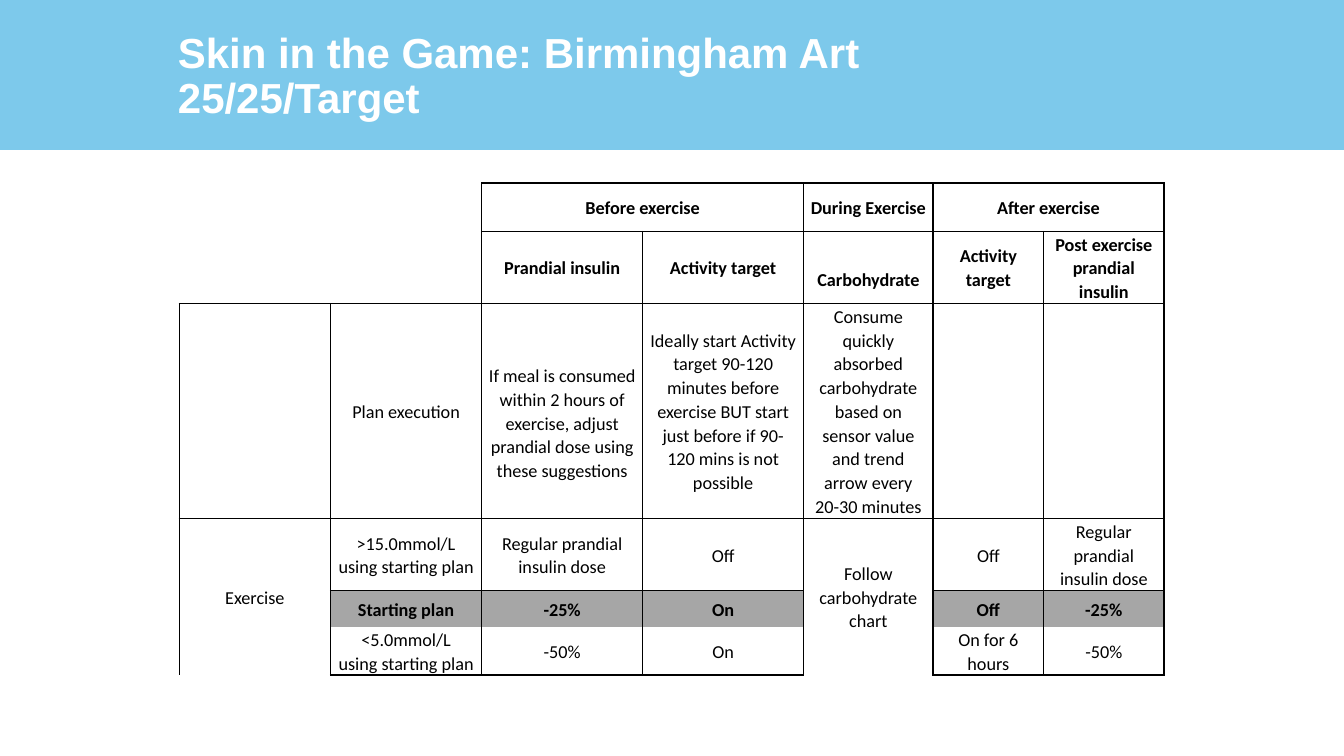
import pptx
import pptx.dml.color
import pptx.enum.shapes
import pptx.enum.text
import pptx.oxml
import pptx.oxml.ns
import pptx.util

Pt = pptx.util.Pt
CENTER = pptx.enum.text.PP_ALIGN.CENTER
MIDDLE = pptx.enum.text.MSO_ANCHOR.MIDDLE

TITLE = "Skin in the Game: Birmingham Art\n25/25/Target"
ROWS = [
    ["", "", "Before exercise", "", "During Exercise", "After exercise", ""],
    ["", "", "Prandial insulin", "Activity target", "Carbohydrate", "Activity target",
     "Post exercise prandial insulin"],
    ["", "Plan execution",
     "If meal is consumed within 2 hours of exercise, adjust prandial dose using these suggestions",
     "Ideally start Activity target 90-120 minutes before exercise BUT start just before "
     "if 90-120 mins is not possible",
     "Consume quickly absorbed carbohydrate based on sensor value and trend arrow every 20-30 minutes",
     "", ""],
    ["Exercise", ">15.0mmol/L\nusing starting plan", "Regular prandial insulin dose", "Off",
     "Follow carbohydrate chart", "Off", "Regular prandial insulin dose"],
    ["", "Starting plan", "-25%", "On", "", "Off", "-25%"],
    ["", "<5.0mmol/L\nusing starting plan", "-50%", "On", "", "On for 6 hours", "-50%"],
]
COLUMN_WIDTHS = [108, 108, 115, 115, 92.5, 79, 86]
ROW_HEIGHTS = [34.5, 51.5, 153.5, 51.75, 25.75, 34.5]
MERGES = [((0, 0), (1, 1)), ((0, 2), (0, 3)), ((0, 5), (0, 6)), ((3, 0), (5, 0)), ((3, 4), (5, 4))]
LOWERED = {(1, 4), (2, 2)}
BOLD_ROWS = {0, 1, 4}
PLAN_ROW = 4
LINE_HEIGHT = 17
NO_STYLE = "{2D5ABB26-0587-4C30-8999-92F81FD0307C}"


def color(value):
    return pptx.dml.color.RGBColor.from_string(value)


def write(frame, text, size, font, fill="000000", bold=False, align=None, spacing=1.0, split=True):
    for index, line in enumerate(text.split("\n") if split else [text]):
        para = frame.paragraphs[0] if index == 0 else frame.add_paragraph()
        para.text = line
        para.line_spacing = spacing
        para.alignment = align
        for span in para.runs:
            span.font.size = Pt(size)
            span.font.name = font
            span.font.bold = bold
            span.font.color.rgb = color(fill)


def set_margins(target, left, top, right, bottom):
    target.margin_left, target.margin_top = Pt(left), Pt(top)
    target.margin_right, target.margin_bottom = Pt(right), Pt(bottom)


def edges(row, column):
    if row < 2 and column < 2:
        return "RB" if (row, column) == (0, 0) else ""
    if row < 3:
        return "LRTB"
    return "LR" + {3: "T", 5: "B"}.get(row, "")


def draw_borders(cell, sides):
    properties = cell._tc.get_or_add_tcPr()
    for side in sides:
        properties.append(pptx.oxml.parse_xml(
            f'<a:ln{side} {pptx.oxml.ns.nsdecls("a")} w="12700"><a:solidFill>'
            f'<a:srgbClr val="000000"/></a:solidFill></a:ln{side}>'))


def add_header(page):
    band = page.shapes.add_shape(pptx.enum.shapes.MSO_SHAPE.RECTANGLE, 0, 0, Pt(960), Pt(107))
    band.shadow.inherit = False
    band.fill.solid()
    band.fill.fore_color.rgb = color("7DC9EB")
    band.line.fill.background()
    box = page.shapes.add_textbox(Pt(120), 0, Pt(505), Pt(107))
    frame = box.text_frame
    frame.word_wrap = True
    frame.vertical_anchor = MIDDLE
    set_margins(frame, 7.2, 3.6, 7.2, 0)
    write(frame, TITLE, 30, "Arial", fill="FFFFFF", bold=True, spacing=0.9, split=False)


def add_plan_table(page):
    holder = page.shapes.add_table(len(ROWS), len(COLUMN_WIDTHS), Pt(128), Pt(130.75),
                                   Pt(sum(COLUMN_WIDTHS)), Pt(sum(ROW_HEIGHTS)))
    table = holder.table
    table.first_row = table.horz_banding = False
    table._tbl.tblPr.find(pptx.oxml.ns.qn("a:tableStyleId")).text = NO_STYLE
    for column, width in zip(table.columns, COLUMN_WIDTHS):
        column.width = Pt(width)
    for row, height in zip(table.rows, ROW_HEIGHTS):
        row.height = Pt(height)
    for first, last in MERGES:
        table.cell(*first).merge(table.cell(*last))
    for row, texts in enumerate(ROWS):
        for column, text in enumerate(texts):
            cell = table.cell(row, column)
            cell.vertical_anchor = MIDDLE
            top = 0.7 + (LINE_HEIGHT if (row, column) in LOWERED else 0)
            set_margins(cell, 5, top, 5, 0)
            draw_borders(cell, edges(row, column))
            if row == PLAN_ROW and text:
                cell.fill.solid()
                cell.fill.fore_color.rgb = color("A6A6A6")
            else:
                cell.fill.background()
            if text:
                write(cell.text_frame, text, 13, "Calibri", bold=row in BOLD_ROWS,
                      align=CENTER, spacing=1.07)


def main():
    deck = pptx.Presentation()
    deck.slide_width, deck.slide_height = Pt(960), Pt(540)
    page = deck.slides.add_slide(deck.slide_layouts[6])
    add_header(page)
    add_plan_table(page)
    deck.save("out.pptx")


if __name__ == "__main__":
    main()
